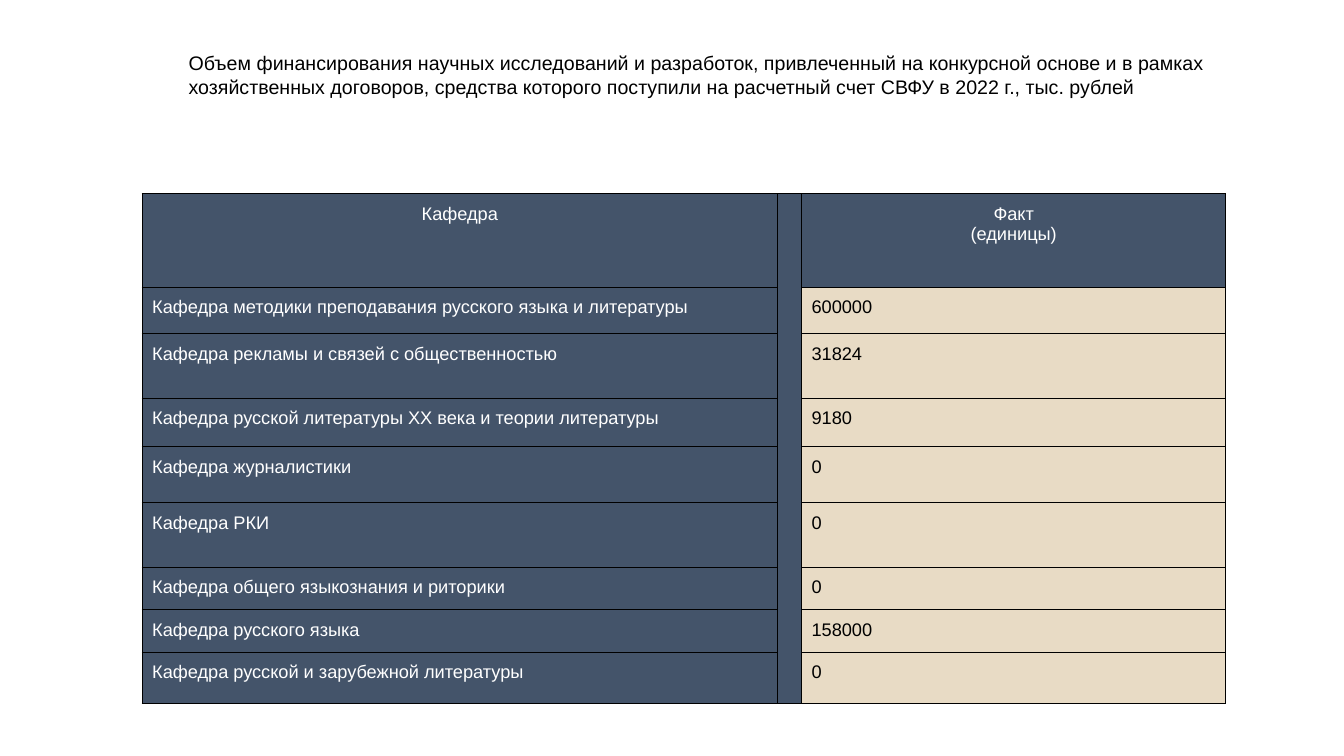
import pptx
import pptx.dml.color
import pptx.enum.text
import pptx.oxml
import pptx.oxml.ns
import pptx.util

Inches = pptx.util.Inches
Align = pptx.enum.text.PP_ALIGN
Anchor = pptx.enum.text.MSO_ANCHOR

SLATE, SAND, WHITE, BLACK = "44546A", "E8DBC5", "FFFFFF", "000000"
FONT = "Arial"

TITLE = ("Объем финансирования научных исследований и разработок, привлеченный "
         "на конкурсной основе и в рамках хозяйственных договоров, средства "
         "которого поступили на расчетный счет СВФУ в 2022 г., тыс. рублей")
HEADER = ("Кафедра", "Факт\n(единицы)")
# Department, funding, row height in inches
DEPARTMENTS = [
    ("Кафедра методики преподавания русского языка и литературы", "600000", 0.46),
    ("Кафедра рекламы и связей с общественностью", "31824", 0.64),
    ("Кафедра русской литературы ХХ века и теории литературы", "9180", 0.48),
    ("Кафедра журналистики", "0", 0.56),
    ("Кафедра РКИ", "0", 0.64),
    ("Кафедра общего языкознания и риторики", "0", 0.42),
    ("Кафедра русского языка", "158000", 0.42),
    ("Кафедра русской и зарубежной литературы", "0", 0.42),
]
HEADER_HEIGHT = 0.93
COLUMN_WIDTHS = (6.3, 0.23, 4.21)


def color(hex_value):
    return pptx.dml.color.RGBColor.from_string(hex_value)


def write_text(frame, text, size=13, ink=BLACK, align=Align.LEFT):
    """Fill a text frame, one paragraph per line of text."""
    for index, line in enumerate(text.split("\n")):
        paragraph = frame.paragraphs[0] if index == 0 else frame.add_paragraph()
        paragraph.alignment = align
        paragraph.line_spacing = 1.0
        run = paragraph.add_run()
        run.text = line
        run.font.name = FONT
        run.font.size = pptx.util.Pt(size)
        run.font.bold = False
        run.font.color.rgb = color(ink)


def format_cell(cell, fill):
    """Give a cell its margins, thin black borders and fill."""
    cell.margin_left = cell.margin_right = Inches(0.1)
    cell.margin_top = cell.margin_bottom = Inches(0.1)
    cell.vertical_anchor = Anchor.TOP
    properties = cell._tc.get_or_add_tcPr()
    for side in ("lnL", "lnR", "lnT", "lnB"):
        properties.append(pptx.oxml.parse_xml(
            f'<a:{side} {pptx.oxml.ns.nsdecls("a")} w="9525"><a:solidFill>'
            f'<a:srgbClr val="{BLACK}"/></a:solidFill></a:{side}>'))
    cell.fill.solid()
    cell.fill.fore_color.rgb = color(fill)


def add_title(slide, left, top, width, height):
    title = slide.shapes.title
    title.left, title.top = Inches(left), Inches(top)
    title.width, title.height = Inches(width), Inches(height)
    frame = title.text_frame
    frame.word_wrap = True
    frame.auto_size = pptx.enum.text.MSO_AUTO_SIZE.NONE
    frame.vertical_anchor = Anchor.TOP
    write_text(frame, TITLE, size=14)


def add_funding_table(slide, left, top):
    heights = [HEADER_HEIGHT] + [height for _, _, height in DEPARTMENTS]
    table = slide.shapes.add_table(
        len(heights), len(COLUMN_WIDTHS), Inches(left), Inches(top),
        Inches(sum(COLUMN_WIDTHS)), Inches(sum(heights))).table
    table.first_row = table.horz_banding = False
    for column, width in zip(table.columns, COLUMN_WIDTHS):
        column.width = Inches(width)
    for row, height in zip(table.rows, heights):
        row.height = Inches(height)

    # Header row
    for column, text in zip((0, 2), HEADER):
        cell = table.cell(0, column)
        format_cell(cell, SLATE)
        write_text(cell.text_frame, text, ink=WHITE, align=Align.CENTER)

    # Department rows
    for row, (name, amount, _) in enumerate(DEPARTMENTS, start=1):
        for column, text, fill, ink in ((0, name, SLATE, WHITE),
                                        (2, amount, SAND, BLACK)):
            cell = table.cell(row, column)
            format_cell(cell, fill)
            write_text(cell.text_frame, text, ink=ink)

    # Divider column, merged from top to bottom
    for row in range(len(heights)):
        format_cell(table.cell(row, 1), SLATE)
    table.cell(0, 1).merge(table.cell(len(heights) - 1, 1))


def main():
    presentation = pptx.Presentation()
    presentation.slide_width = Inches(13.33)
    presentation.slide_height = Inches(7.5)
    slide = presentation.slides.add_slide(presentation.slide_layouts[5])
    add_title(slide, 1.77, 0.46, 10.38, 0.57)
    add_funding_table(slide, 1.41, 1.92)
    presentation.save("out.pptx")


if __name__ == "__main__":
    main()
